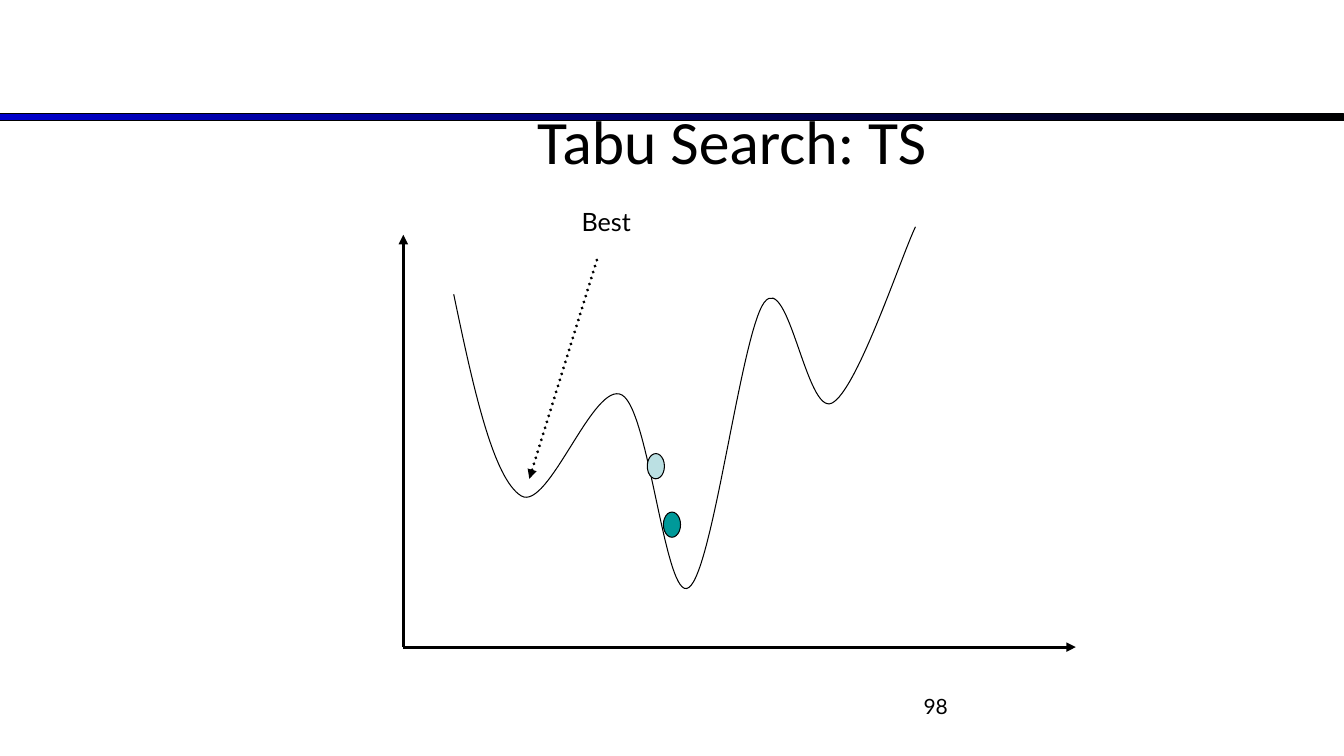
from lxml import etree
from pptx import Presentation
from pptx import util as u
from pptx.dml.color import RGBColor
from pptx.enum import dml, shapes, text
from pptx.oxml.ns import qn

PX = 9144
COLORS = {
    "black": "000000",
    "blue": "0000CC",
    "teal": "009999",
    "pale": "BBE0E3",
}


def style_outline(shape, width):
    shape.line.color.rgb = RGBColor.from_string(COLORS["black"])
    shape.line.width = u.Pt(width)


def style_text(shape, content, font_name, size, alignment):
    frame = shape.text_frame
    frame.word_wrap = True
    frame.text = content
    paragraph = frame.paragraphs[0]
    paragraph.alignment = alignment
    font = paragraph.runs[0].font
    font.name = font_name
    font.size = u.Pt(size)
    font.color.rgb = RGBColor.from_string(COLORS["black"])


presentation = Presentation()
presentation.slide_width = 1333 * PX
presentation.slide_height = 750 * PX
slide = presentation.slides.add_slide(presentation.slide_layouts[5])

bar = slide.shapes.add_shape(
    shapes.MSO_SHAPE.RECTANGLE, 0, 113 * PX, 1333 * PX, 7 * PX
)
bar.shadow.inherit = False
bar.fill.gradient()
bar.fill.gradient_angle = 0
for stop, color in zip(bar.fill.gradient_stops, ("blue", "black")):
    stop.color.rgb = RGBColor.from_string(COLORS[color])
style_outline(bar, 0.75)

title = slide.shapes.title
title.left, title.top, title.width, title.height = (
    length * PX for length in (300, 94, 852, 90)
)
style_text(title, "Tabu Search: TS", "Calibri", 44, text.PP_ALIGN.CENTER)
title.text_frame.vertical_anchor = text.MSO_ANCHOR.MIDDLE
title.text_frame.auto_size = text.MSO_AUTO_SIZE.NONE

labels = [
    ("98", 717, 683, 233, 52, 15, text.PP_ALIGN.RIGHT),
    ("Best", 567, 200, 117, 40, 18, text.PP_ALIGN.LEFT),
]
for content, left, top, width, height, size, alignment in labels:
    label = slide.shapes.add_textbox(left * PX, top * PX, width * PX, height * PX)
    style_text(label, content, "Lato", size, alignment)

arrows = [
    (400, 642, 400, 233, None),
    (400, 642, 1067, 642, None),
    (592, 258, 525, 475, dml.MSO_LINE.ROUND_DOT),
]
for start_x, start_y, end_x, end_y, dash in arrows:
    arrow = slide.shapes.add_connector(
        shapes.MSO_CONNECTOR.STRAIGHT,
        start_x * PX, start_y * PX, end_x * PX, end_y * PX,
    )
    style_outline(arrow, 2.25)
    outline = arrow._element.spPr.find(qn("a:ln"))
    if dash:
        arrow.line.dash_style = dash
        outline.set("cap", "rnd")
    etree.SubElement(outline, qn("a:tailEnd"), type="triangle")
    etree.SubElement(arrow._element.spPr, qn("a:effectLst"))

curve_points = [
    (469, 383), (489, 475), (517, 492),
    (544, 508), (589, 376), (617, 392),
    (644, 407), (660, 599), (683, 583),
    (707, 568), (735, 331), (758, 300),
    (782, 269), (800, 412), (825, 400),
    (850, 388), (894, 254), (908, 225),
]
builder = slide.shapes.build_freeform(450, 292, scale=PX)
builder.add_line_segments(curve_points, close=False)
cost_curve = builder.convert_to_shape()
lines = list(cost_curve._element.iter(qn("a:lnTo")))
for index in range(0, len(lines), 3):
    bezier = etree.Element(qn("a:cubicBezTo"))
    lines[index].addprevious(bezier)
    for line in lines[index:index + 3]:
        bezier.append(line[0])
        line.getparent().remove(line)
cost_curve.shadow.inherit = False
cost_curve.fill.background()
style_outline(cost_curve, 0.75)

for left, top, color in ((658, 508, "teal"), (642, 450, "pale")):
    solution = slide.shapes.add_shape(
        shapes.MSO_SHAPE.OVAL, left * PX, top * PX, 17 * PX, 25 * PX
    )
    solution.shadow.inherit = False
    solution.fill.solid()
    solution.fill.fore_color.rgb = RGBColor.from_string(COLORS[color])
    style_outline(solution, 0.75)

presentation.save("out.pptx")
